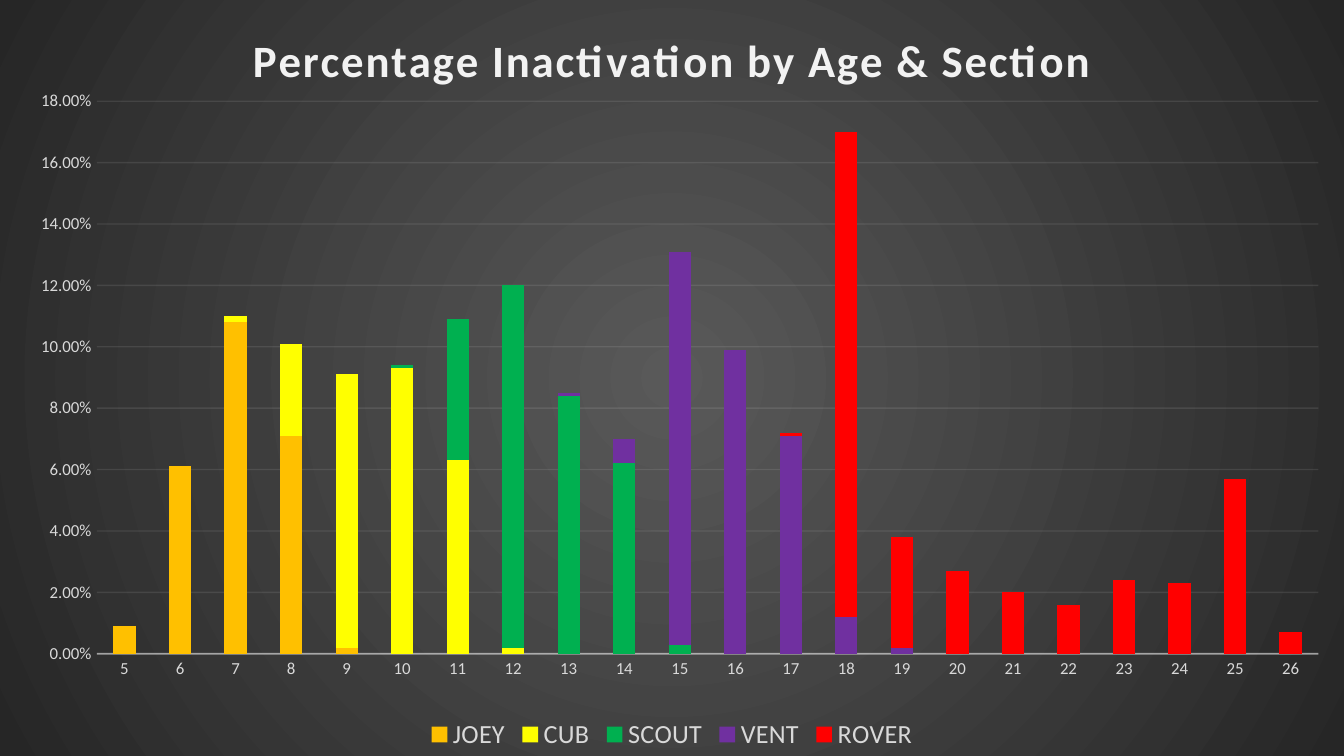
from lxml import etree
from pptx import Presentation
from pptx.chart.data import CategoryChartData
from pptx.dml.color import RGBColor
from pptx.enum.chart import XL_CHART_TYPE, XL_LEGEND_POSITION, XL_TICK_MARK
from pptx.oxml import parse_xml
from pptx.oxml.ns import nsdecls, qn
from pptx.util import Emu, Pt

STACKED = XL_CHART_TYPE.COLUMN_STACKED
BOTTOM = XL_LEGEND_POSITION.BOTTOM
NO_TICK = XL_TICK_MARK.NONE

PALE = RGBColor(0xF2, 0xF2, 0xF2)
GREY = RGBColor(0xD9, 0xD9, 0xD9)
AMBER = RGBColor(0xFF, 0xC0, 0x00)
YELLOW = RGBColor(0xFF, 0xFF, 0x00)
GREEN = RGBColor(0x00, 0xB0, 0x50)
PURPLE = RGBColor(0x70, 0x30, 0xA0)
RED = RGBColor(0xFF, 0x00, 0x00)

FACE = "Calibri"
PX = 914400 / 134.4
WIDE, HIGH = (Emu(round(n * PX)) for n in (1344, 756))


def write(frame, text, size, color, bold=False, gap=0):
    """Fill a text frame; gap is the letter spacing in hundredths of a point."""
    run = frame.paragraphs[0].add_run()
    run.text = text
    font = run.font
    font.name, font.size, font.bold = FACE, Pt(size), bold
    font.color.rgb = color
    run._r.get_or_add_rPr().set("spc", str(gap))


def rule(line, width, alpha):
    """Draw a pale line with the given opacity in percent."""
    line.width = Pt(width)
    line.color.rgb = PALE
    tone = line._ln.find(".//" + qn("a:srgbClr"))
    etree.SubElement(tone, qn("a:alpha")).set("val", str(alpha * 1000))


# Each section: name, colour, first age, shares for the ages that follow
SECTIONS = [
    ("JOEY", AMBER, 5, [0.009, 0.061, 0.108, 0.071, 0.002]),
    ("CUB", YELLOW, 7, [0.002, 0.03, 0.089, 0.093, 0.063, 0.002]),
    ("SCOUT", GREEN, 10, [0.001, 0.046, 0.118, 0.084, 0.062, 0.003]),
    ("VENT", PURPLE, 13, [0.001, 0.008, 0.128, 0.099, 0.071, 0.012, 0.002]),
    ("ROVER", RED, 17,
     [0.001, 0.158, 0.036, 0.027, 0.02, 0.016, 0.024, 0.023, 0.057, 0.007]),
]
AGES = range(5, 27)

prs = Presentation()
prs.slide_width, prs.slide_height = WIDE, HIGH
slide = prs.slides.add_slide(prs.slide_layouts[6])

data = CategoryChartData(number_format="0.00%")
data.categories = [str(age) for age in AGES]
for name, color, start, rates in SECTIONS:
    known = dict(enumerate(rates, start))
    data.add_series(name, [known.get(age, 0) for age in AGES])
chart = slide.shapes.add_chart(STACKED, 0, 0, WIDE, HIGH, data).chart
chart.font.name, chart.font.size = FACE, Pt(10)

# Title and legend
write(chart.chart_title.text_frame, "Percentage Inactivation by Age & Section",
      size=24, color=PALE, bold=True, gap=100)
chart.chart_title.include_in_layout = False
chart.has_legend = True
legend = chart.legend
legend.position = BOTTOM
legend.include_in_layout = False

# Columns
plot = chart.plots[0]
plot.gap_width, plot.overlap = 150, 100
plot.vary_by_categories = False
for bar, (name, color, start, rates) in zip(plot.series, SECTIONS):
    bar.format.fill.solid()
    bar.format.fill.fore_color.rgb = color
    bar.invert_if_negative = False

# Axes
ages, rate = chart.category_axis, chart.value_axis
for axis in (ages, rate):
    axis.major_tick_mark = axis.minor_tick_mark = NO_TICK
for font, size in ((ages.tick_labels.font, 9), (rate.tick_labels.font, 9),
                   (legend.font, 14)):
    font.name, font.size = FACE, Pt(size)
    font.color.rgb = GREY
rule(ages.format.line, 1, 54)
rate.minimum_scale, rate.maximum_scale, rate.major_unit = 0, 0.18, 0.02
rate.tick_labels.number_format = "0.00%"
rate.tick_labels.number_format_is_linked = False
rate.format.line.fill.background()
rate.has_major_gridlines = True
rule(rate.major_gridlines.format.line, 0.75, 10)

# Place of the plot area
area = chart._chartSpace.find(".//" + qn("c:plotArea"))
for old in area.findall(qn("c:layout")):
    area.remove(old)
layout = etree.Element(qn("c:layout"))
manual = etree.SubElement(layout, qn("c:manualLayout"))
for tag, val in (("layoutTarget", "inner"), ("xMode", "edge"),
                 ("yMode", "edge"), ("x", 0.072), ("y", 0.134),
                 ("w", 0.909), ("h", 0.731)):
    etree.SubElement(manual, qn("c:" + tag)).set("val", str(val))
area.insert(0, layout)

# Round gradient behind the chart
back = parse_xml(f"""<c:spPr {nsdecls("c", "a")}>
  <a:gradFill><a:gsLst>
    <a:gs pos="0"><a:srgbClr val="595959"/></a:gs>
    <a:gs pos="100000"><a:srgbClr val="262626"/></a:gs>
  </a:gsLst><a:path path="circle">
    <a:fillToRect l="50000" t="50000" r="50000" b="50000"/>
  </a:path></a:gradFill>
  <a:ln><a:noFill/></a:ln>
</c:spPr>""")
chart._chartSpace.find(qn("c:chart")).addnext(back)

prs.save("out.pptx")
